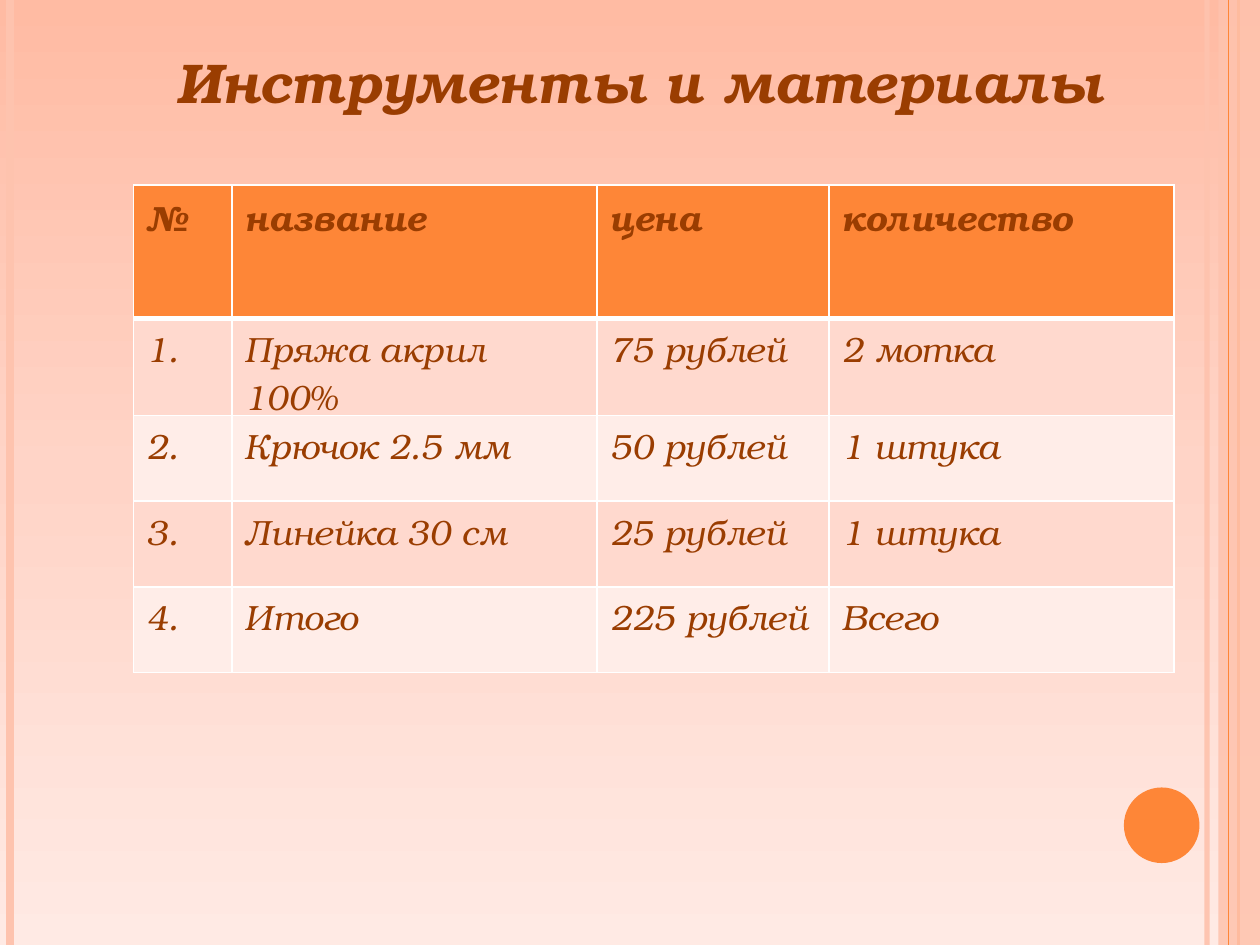
from copy import deepcopy

from pptx import Presentation
from pptx.dml.color import RGBColor
from pptx.enum.shapes import MSO_CONNECTOR as Connector, MSO_SHAPE as Shape
from pptx.enum.text import MSO_ANCHOR as Anchor, MSO_AUTO_SIZE as AutoSize, PP_ALIGN as Align
from pptx.oxml.ns import qn
from pptx.oxml.xmlchemy import OxmlElement as new_element
from pptx.util import Inches, Pt

COLORS = {
    "text": "9A3D01",
    "accent": "FE8637",
    "stripe": "FEC3AE",
    "dark_row": "FFD9CE",
    "light_row": "FFEDE8",
    "border": "FFFFFF",
}
BACKGROUND_STOPS = [(0, "FFBBA3"), (0.5, "FFD4C7"), (1, "FFEAE4")]
FONT = "TeX Gyre Bonum"
TITLE_FORMAT = {"name": FONT, "size": Pt(32), "bold": True, "italic": True}
HEADER_FORMAT = {"name": FONT, "size": Pt(20), "bold": True, "italic": True}
BODY_FORMAT = {**HEADER_FORMAT, "bold": False}

MATERIALS = [
    ("№", "название", "цена", "количество"),
    ("1.", "Пряжа акрил 100%", "75 рублей", "2 мотка"),
    ("2.", "Крючок 2.5 мм", "50 рублей", "1 штука"),
    ("3.", "Линейка 30 см", "25 рублей", "1 штука"),
    ("4.", "Итого", "225 рублей", "Всего"),
]
COLUMN_WIDTHS = [0.78, 2.9, 1.84, 2.74]
ROW_HEIGHTS = [1.06] + [0.68] * 4


def rgb(name):
    """Return the palette colour with this name."""
    return RGBColor.from_string(COLORS[name])


def format_font(font, values):
    """Apply a set of format values and the text colour to a font."""
    for attribute, value in values.items():
        setattr(font, attribute, value)
    font.color.rgb = rgb("text")


def set_alpha(element, percent):
    """Make the solid colour inside an element partly transparent."""
    alpha = new_element("a:alpha")
    alpha.set("val", str(percent * 1000))
    next(element.iter(qn("a:srgbClr"))).append(alpha)


def paint_background(slide):
    """Fill the slide with a vertical three-stop gradient."""
    fill = slide.background.fill
    fill.gradient()
    fill.gradient_angle = 270
    stop_list = next(slide.background._cSld.iter(qn("a:gsLst")))
    stop_list.append(deepcopy(stop_list[0]))
    for stop, (position, color) in zip(fill.gradient_stops, BACKGROUND_STOPS):
        stop.position = position
        stop.color.rgb = RGBColor.from_string(color)


def add_stripe(slide, x, color, width, opacity=100):
    """Draw a full-height vertical line."""
    stripe = slide.shapes.add_connector(
        Connector.STRAIGHT, Inches(x), 0, Inches(x), Inches(7.5))
    stripe.line.color.rgb = rgb(color)
    stripe.line.width = Pt(width)
    properties = stripe._element.spPr
    if opacity < 100:
        set_alpha(properties, opacity)
    properties.append(new_element("a:effectLst"))


def add_plain_shape(slide, kind, bounds, color, opacity=100):
    """Draw a filled shape without outline or shadow."""
    shape = slide.shapes.add_shape(kind, *map(Inches, bounds))
    shape.shadow.inherit = False
    shape.fill.solid()
    shape.fill.fore_color.rgb = rgb(color)
    shape.line.fill.background()
    if opacity < 100:
        set_alpha(shape._element.spPr, opacity)


def write_title(slide, text):
    """Place and format the title placeholder."""
    title = slide.shapes.title
    title.left, title.top, title.width, title.height = map(
        Inches, (1.3, 0.33, 10.16, 0.64))
    frame = title.text_frame
    frame.text = text
    frame.word_wrap = True
    frame.auto_size = AutoSize.SHAPE_TO_FIT_TEXT
    frame.vertical_anchor = Anchor.TOP
    heading = frame.paragraphs[0]
    heading.alignment = Align.LEFT
    format_font(heading.runs[0].font, TITLE_FORMAT)


def set_borders(cell, top, bottom):
    """Give a cell white borders with the given top and bottom widths."""
    properties = cell._tc.get_or_add_tcPr()
    for side, width in {"L": 1, "R": 1, "T": top, "B": bottom}.items():
        border = new_element(f"a:ln{side}")
        border.set("w", str(Pt(width)))
        fill = new_element("a:solidFill")
        color = new_element("a:srgbClr")
        color.set("val", COLORS["border"])
        fill.append(color)
        border.append(fill)
        properties.append(border)


def add_materials_table(slide):
    """Build the table of materials with a header and banded rows."""
    table = slide.shapes.add_table(
        len(MATERIALS), len(COLUMN_WIDTHS), Inches(1.06), Inches(1.47),
        Inches(sum(COLUMN_WIDTHS)), Inches(sum(ROW_HEIGHTS))).table
    for column, width in zip(table.columns, COLUMN_WIDTHS):
        column.width = Inches(width)
    for index, (row, height, values) in enumerate(zip(table.rows, ROW_HEIGHTS, MATERIALS)):
        row.height = Inches(height)
        is_header = index == 0
        band = "accent" if is_header else "dark_row" if index % 2 else "light_row"
        for cell, value in zip(row.cells, values):
            cell.text = value
            set_borders(cell, top=3 if index == 1 else 1, bottom=3 if is_header else 1)
            cell.fill.solid()
            cell.fill.fore_color.rgb = rgb(band)
            format_font(cell.text_frame.paragraphs[0].runs[0].font,
                        HEADER_FORMAT if is_header else BODY_FORMAT)


def main():
    """Build and save the slide."""
    deck = Presentation()
    deck.slide_width, deck.slide_height = Inches(10), Inches(7.5)
    slide = deck.slides.add_slide(deck.slide_layouts[5])
    paint_background(slide)
    add_stripe(slide, 9.58, "stripe", 3, opacity=93)
    add_stripe(slide, 0.08, "stripe", 4.5)
    add_stripe(slide, 9.83, "accent", 1.5)
    add_plain_shape(slide, Shape.RECTANGLE, (9.67, 0, 0.33, 7.5), "stripe", opacity=87)
    add_stripe(slide, 9.75, "accent", 0.75)
    add_plain_shape(slide, Shape.OVAL, (8.92, 6.25, 0.6, 0.6), "accent")
    write_title(slide, "Инструменты и материалы")
    add_materials_table(slide)
    deck.save("out.pptx")


if __name__ == "__main__":
    main()
